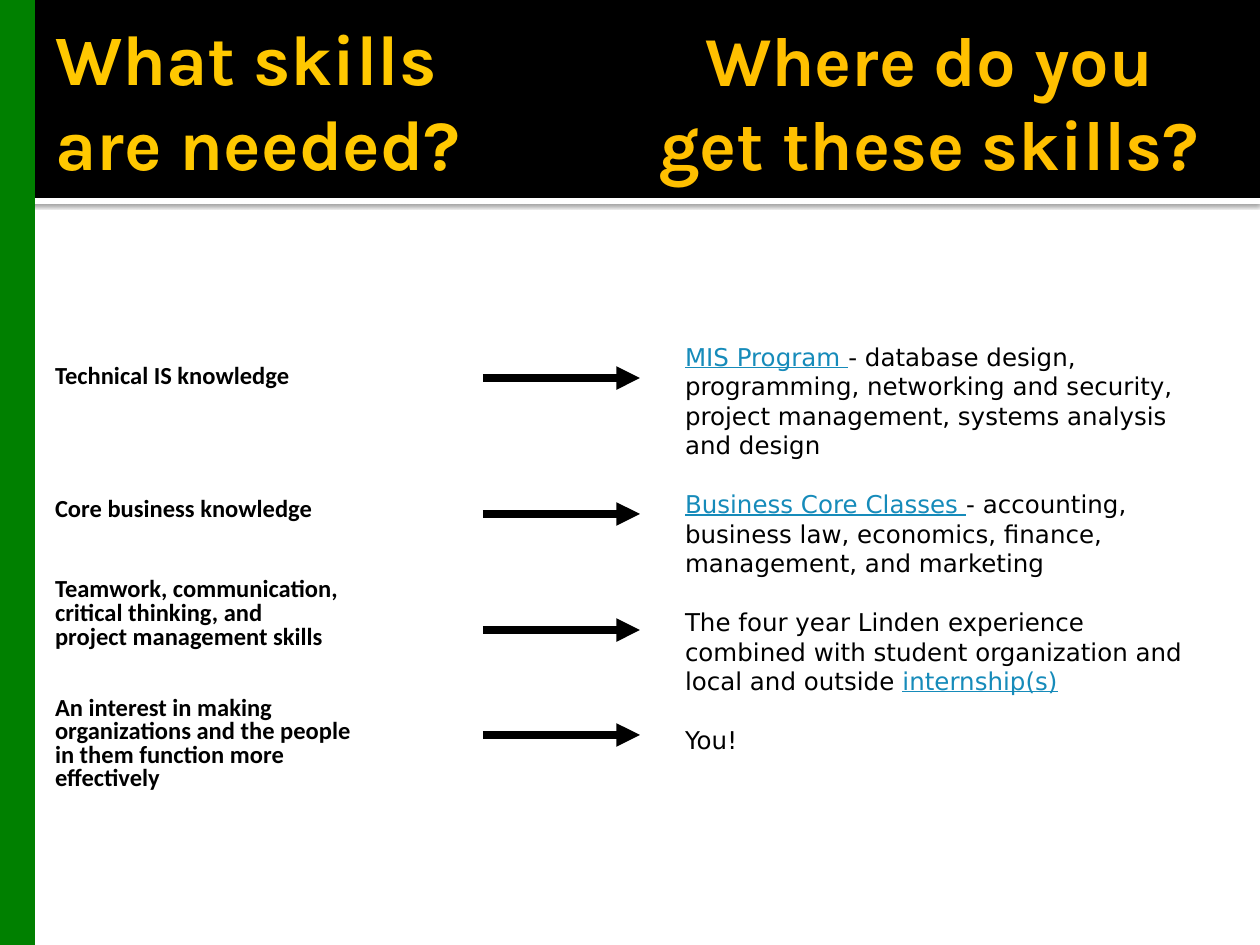
import dataclasses
import typing

import pptx
import pptx.dml.color
import pptx.enum.shapes
import pptx.enum.text
import pptx.oxml
import pptx.oxml.ns
import pptx.util

EMU_PER_PX = 914400 / 126
BLACK = "000000"
LINK = "168BBA"
NAMESPACE = pptx.oxml.ns.nsdecls("a")


@dataclasses.dataclass(frozen=True)
class Box:
    left: int
    top: int
    width: int
    height: int


@dataclasses.dataclass(frozen=True)
class Style:
    font: str
    size: float
    color: str = BLACK
    bold: bool = False
    underline: bool = False


@dataclasses.dataclass(frozen=True)
class Band:
    box: Box
    color: str
    shadow: bool = False


@dataclasses.dataclass(frozen=True)
class Skill:
    lines: tuple[str, ...]
    gap: float
    first_spacing: float
    next_spacing: float
    arrow_y: int


SKILL_STYLE = Style("Calibri", 14, bold=True)
SOURCE_STYLE = Style("DejaVu Sans", 14)
LINK_STYLE = dataclasses.replace(SOURCE_STYLE, color=LINK, underline=True)

BANDS = (
    Band(Box(0, 198, 1260, 6), "FFFFFF", shadow=True),
    Band(Box(0, 0, 1260, 198), BLACK),
    Band(Box(0, 0, 35, 945), "008000"),
)

SKILLS = (
    Skill(("Technical IS knowledge",), 0, 0.95, 0.95, 378),
    Skill(("Core business knowledge",), 61, 0.9, 0.9, 514),
    Skill(
        ("Teamwork, communication,", "critical thinking, and", "project management skills"),
        30.5, 0.9, 0.8, 630,
    ),
    Skill(
        ("An interest in making", "organizations and the people", "in them function more", "effectively"),
        27, 0.8, 0.8, 735,
    ),
)

SOURCES = (
    (
        ("MIS Program ", LINK_STYLE),
        ("- database design, programming, networking and security, "
         "project management, systems analysis and design", SOURCE_STYLE),
    ),
    (
        ("Business Core Classes ", LINK_STYLE),
        ("- accounting, business law, economics, finance, management, and marketing", SOURCE_STYLE),
    ),
    (
        ("The four year Linden experience combined with student organization "
         "and local and outside ", SOURCE_STYLE),
        ("internship(s)", LINK_STYLE),
    ),
    (("You!", SOURCE_STYLE),),
)


def px(length: int) -> pptx.util.Emu:
    return pptx.util.Emu(round(length * EMU_PER_PX))


def rgb(color: str) -> pptx.dml.color.RGBColor:
    return pptx.dml.color.RGBColor.from_string(color)


def place(shape: typing.Any, box: Box) -> None:
    shape.left, shape.top = px(box.left), px(box.top)
    shape.width, shape.height = px(box.width), px(box.height)


def prepare_text(shape: typing.Any, insets: tuple[int, int, int, int], middle: bool = False) -> typing.Any:
    frame = shape.text_frame
    frame.word_wrap = True
    frame.auto_size = pptx.enum.text.MSO_AUTO_SIZE.NONE
    anchor = pptx.enum.text.MSO_ANCHOR
    frame.vertical_anchor = anchor.MIDDLE if middle else anchor.TOP
    frame.margin_left, frame.margin_top, frame.margin_right, frame.margin_bottom = map(px, insets)
    return frame


def add_run(paragraph: typing.Any, text: str, style: Style) -> None:
    run = paragraph.add_run()
    run.text = text
    run.font.name = style.font
    run.font.size = pptx.util.Pt(style.size)
    run.font.bold = style.bold
    run.font.underline = style.underline
    run.font.color.rgb = rgb(style.color)


def next_paragraph(frame: typing.Any, index: int) -> typing.Any:
    return frame.add_paragraph() if index else frame.paragraphs[0]


def add_band(slide: typing.Any, band: Band) -> None:
    shape = slide.shapes.add_shape(pptx.enum.shapes.MSO_SHAPE.RECTANGLE, 0, 0, 0, 0)
    place(shape, band.box)
    shape.fill.solid()
    shape.fill.fore_color.rgb = rgb(band.color)
    shape.line.fill.background()
    shape.shadow.inherit = False
    if band.shadow:
        effects = shape.element.spPr.find(pptx.oxml.ns.qn("a:effectLst"))
        effects.append(pptx.oxml.parse_xml(
            f'<a:outerShdw {NAMESPACE} blurRad="31750" dist="10160" dir="5400000" rotWithShape="0">'
            f'<a:srgbClr val="{BLACK}"><a:alpha val="60000"/></a:srgbClr></a:outerShdw>'
        ))


def add_arrow(slide: typing.Any, y: int) -> None:
    arrow = slide.shapes.add_connector(
        pptx.enum.shapes.MSO_CONNECTOR.STRAIGHT, px(483), px(y), px(640), px(y)
    )
    arrow.line.color.rgb = rgb(BLACK)
    arrow.line.width = pptx.util.Pt(4.5)
    arrow.line._get_or_add_ln().append(pptx.oxml.parse_xml(f'<a:tailEnd {NAMESPACE} type="triangle"/>'))
    arrow.element.spPr.append(pptx.oxml.parse_xml(f"<a:effectLst {NAMESPACE}/>"))


def fill_heading(shape: typing.Any, text: str, style: Style, alignment: typing.Any, right_inset: int) -> None:
    frame = prepare_text(shape, (13, 6, right_inset, 6), middle=True)
    frame.paragraphs[0].alignment = alignment
    add_run(frame.paragraphs[0], text, style)


def fill_skills(shape: typing.Any) -> None:
    frame = prepare_text(shape, (13, 41, 13, 6))
    lines = [(skill, row, text) for skill in SKILLS for row, text in enumerate(skill.lines)]
    for index, (skill, row, text) in enumerate(lines):
        paragraph = next_paragraph(frame, index)
        paragraph.space_before = pptx.util.Pt(0 if row else skill.gap)
        paragraph.line_spacing = skill.next_spacing if row else skill.first_spacing
        properties = paragraph._p.get_or_add_pPr()
        properties.set("marL", str(px(10)))
        properties.set("indent", "0")
        properties.append(pptx.oxml.parse_xml(f"<a:buNone {NAMESPACE}/>"))
        add_run(paragraph, text, SKILL_STYLE)


def fill_sources(shape: typing.Any) -> None:
    frame = prepare_text(shape, (13, 6, 13, 6))
    for index, runs in enumerate(SOURCES):
        paragraph = next_paragraph(frame, index)
        paragraph.space_before = pptx.util.Pt(17 if index else 0)
        for text, style in runs:
            add_run(paragraph, text, style)


def main() -> None:
    presentation = pptx.Presentation()
    presentation.slide_width, presentation.slide_height = px(1260), px(945)
    slide = presentation.slides.add_slide(presentation.slide_layouts[1])
    title, body = slide.placeholders
    for band in BANDS:
        add_band(slide, band)
    for placeholder, box in ((title, Box(42, 21, 451, 158)), (body, Box(32, 321, 567, 624))):
        place(placeholder, box)
        slide.shapes.element.append(placeholder.element)
    alignment = pptx.enum.text.PP_ALIGN
    fill_heading(title, "What skills are needed?", Style("Karla", 40.5, "FFC800", True), alignment.LEFT, 6)
    fill_skills(body)
    for skill in SKILLS:
        add_arrow(slide, skill.arrow_y)
    heading = slide.shapes.add_textbox(px(635), px(21), px(588), px(158))
    fill_heading(heading, "Where do you get these skills?", Style("Karla", 40, "FFC000", True), alignment.CENTER, 13)
    fill_sources(slide.shapes.add_textbox(px(672), px(336), px(525), px(488)))
    presentation.save("out.pptx")


if __name__ == "__main__":
    main()
